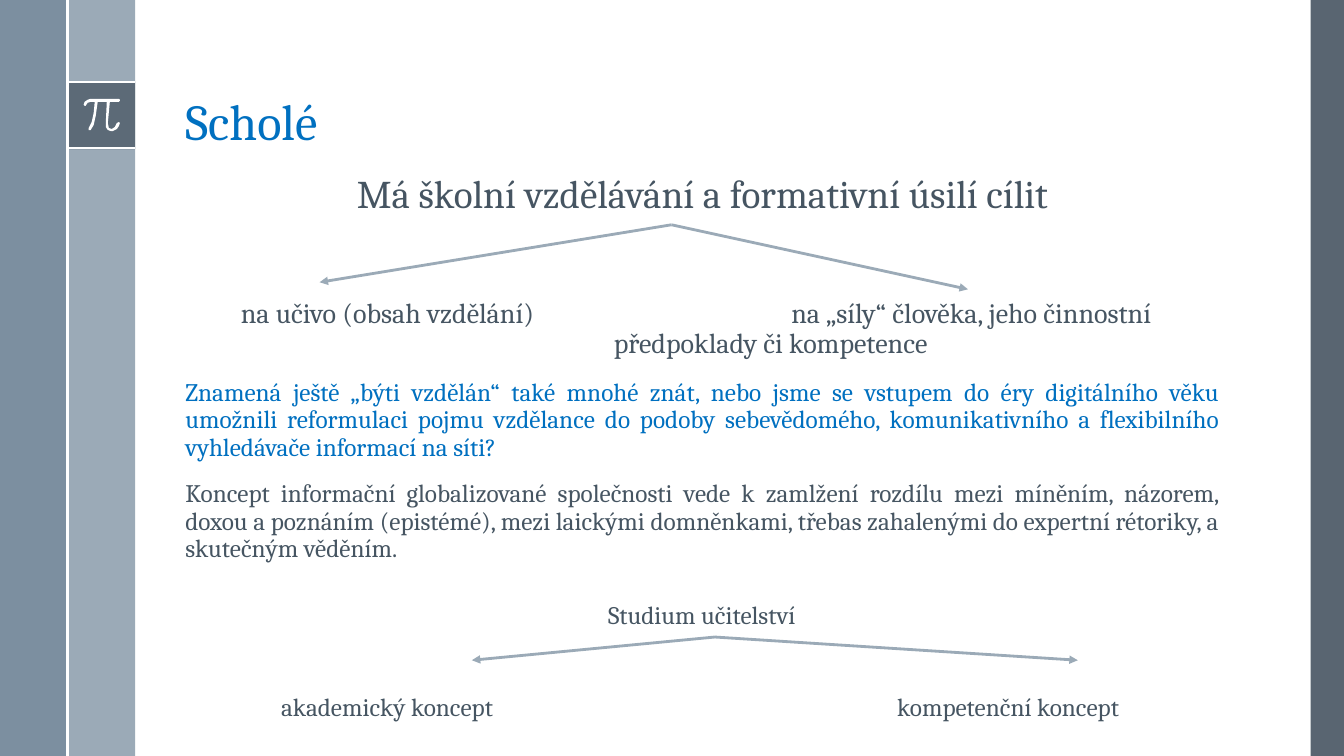
from lxml import etree
from pptx import Presentation
from pptx.dml.color import RGBColor
from pptx.enum.shapes import MSO_CONNECTOR, MSO_SHAPE
from pptx.enum.text import MSO_ANCHOR, PP_ALIGN
from pptx.oxml.ns import qn
from pptx.util import Inches, Pt

LEFT, CENTER, JUSTIFY = PP_ALIGN.LEFT, PP_ALIGN.CENTER, PP_ALIGN.JUSTIFY
TOP, BOTTOM = MSO_ANCHOR.TOP, MSO_ANCHOR.BOTTOM
WHITE = RGBColor(0xFF, 0xFF, 0xFF)
SLATE = RGBColor(0x47, 0x55, 0x62)
STEEL = RGBColor(0x6A, 0x80, 0x93)
MIST = RGBColor(0x9B, 0xAA, 0xB7)
INK = RGBColor(0x46, 0x55, 0x62)
BLUE = RGBColor(0x00, 0x70, 0xC0)

prs = Presentation()
prs.slide_width, prs.slide_height = Inches(13.33), Inches(7.5)
s = prs.slides.add_slide(prs.slide_layouts[6])


def add_line(x1, y1, x2, y2, color, width, arrow=False):
    sp = s.shapes.add_connector(MSO_CONNECTOR.STRAIGHT, Inches(x1), Inches(y1), Inches(x2), Inches(y2))
    sp.line.color.rgb = color
    sp.line.width = Pt(width)
    if arrow:
        etree.SubElement(sp.line._get_or_add_ln(), qn("a:tailEnd"), type="triangle")
    etree.SubElement(sp._element.spPr, qn("a:effectLst"))


def add_text(x, y, w, h, paragraphs, size, align=LEFT, spacing=1.0, anchor=TOP, first_indent=0):
    """Add a text box; paragraphs is a list of (text, colour)."""
    tf = s.shapes.add_textbox(Inches(x), Inches(y), Inches(w), Inches(h)).text_frame
    tf.word_wrap = True
    tf.vertical_anchor = anchor
    for i, (text, color) in enumerate(paragraphs):
        p = tf.paragraphs[0] if i == 0 else tf.add_paragraph()
        p.text = text
        p.alignment = align
        p.line_spacing = spacing
        if i:
            p.space_before = Pt(14)
        if first_indent:
            p._p.get_or_add_pPr().set("indent", str(Inches(first_indent)))
        p.font.name = "Cambria"
        p.font.size = Pt(size)
        p.font.color.rgb = color


# Side bands: left, top, width, height, colour, opacity in percent
for x, y, w, h, color, opacity in [
    (13, 0, 0.33, 7.5, SLATE, 90),
    (0.67, 0, 0.67, 7.5, MIST, 100),
    (0, 0, 0.67, 7.5, STEEL, 88),
    (0.67, 0.81, 0.67, 0.67, SLATE, 75),
]:
    band = s.shapes.add_shape(MSO_SHAPE.RECTANGLE, Inches(x), Inches(y), Inches(w), Inches(h))
    band.shadow.inherit = False
    band.fill.solid()
    band.fill.fore_color.rgb = color
    band.line.fill.background()
    if opacity < 100:
        clr = band._element.spPr.find(qn("a:solidFill"))[0]
        etree.SubElement(clr, qn("a:alpha"), val=str(opacity * 1000))

for y in (0.81, 1.47):
    add_line(0.67, y, 1.34, y, WHITE, 1.5)
add_line(0.67, 0, 0.67, 7.5, WHITE, 1.5)

# Pi sign, in hundredths of an inch
PI_POINTS = [
    (118, 98), (90, 98), (87, 98.7), (84.5, 101), (83, 104), (84, 105), (85, 105), (87, 102),
    (90, 101), (94, 101), (93, 112), (91, 121), (88, 127), (88, 129), (90, 129), (93, 124),
    (95, 115), (97, 101), (106, 101), (105, 122), (105, 126), (107, 129), (110, 130), (112, 130),
    (116, 128), (118, 125), (119, 122), (118, 121), (116, 122), (114.5, 126), (111, 128),
    (108, 127), (107, 122), (109, 101), (118, 101), (119, 100), (119, 99),
]
builder = s.shapes.build_freeform(*PI_POINTS[0], scale=Inches(0.01))
builder.add_line_segments(PI_POINTS[1:], close=True)
pi_sign = builder.convert_to_shape()
pi_sign.shadow.inherit = False
pi_sign.fill.solid()
pi_sign.fill.fore_color.rgb = WHITE
pi_sign.line.fill.background()

add_text(1.74, 0.19, 10.7, 1.36, [("Scholé", BLUE)], 36, spacing=0.9, anchor=BOTTOM)

# Upper fork
add_text(1.74, 1.68, 10.45, 0.53, [("Má školní vzdělávání a formativní úsilí cílit", INK)], 28, CENTER, 0.9)
add_text(2.29, 2.92, 3.6, 0.4, [("na učivo (obsah vzdělání)", INK)], 20, spacing=0.9)
add_text(5.99, 2.92, 6.2, 0.71,
         [("na „síly“ člověka, jeho činnostní předpoklady či kompetence", INK)],
         20, spacing=0.9, first_indent=1.76)

add_text(1.74, 3.72, 10.45, 2, [
    ("Znamená ještě „býti vzdělán“ také mnohé znát, nebo jsme se vstupem do éry digitálního věku "
     "umožnili reformulaci pojmu vzdělance do podoby sebevědomého, komunikativního a flexibilního "
     "vyhledávače informací na síti?", BLUE),
    ("Koncept informační globalizované společnosti vede k zamlžení rozdílu mezi míněním, názorem, "
     "doxou a poznáním (epistémé), mezi laickými domněnkami, třebas zahalenými do expertní rétoriky, "
     "a skutečným věděním.", INK),
], 18, JUSTIFY, 0.9)

# Lower fork
add_text(1.64, 5.9, 10.64, 0.4, [("Studium učitelství", INK)], 18, CENTER)
for x, concept in [(2.69, "akademický koncept"), (8.8, "kompetenční koncept")]:
    add_text(x, 6.81, 3, 0.4, [(concept, INK)], 18)

for x1, y1, x2, y2 in [
    (6.66, 2.23, 3.17, 2.8), (6.66, 2.23, 9.6, 2.87),
    (7.09, 6.32, 4.68, 6.55), (7.09, 6.32, 10.69, 6.55),
]:
    add_line(x1, y1, x2, y2, MIST, 2, arrow=True)

prs.save("out.pptx")
